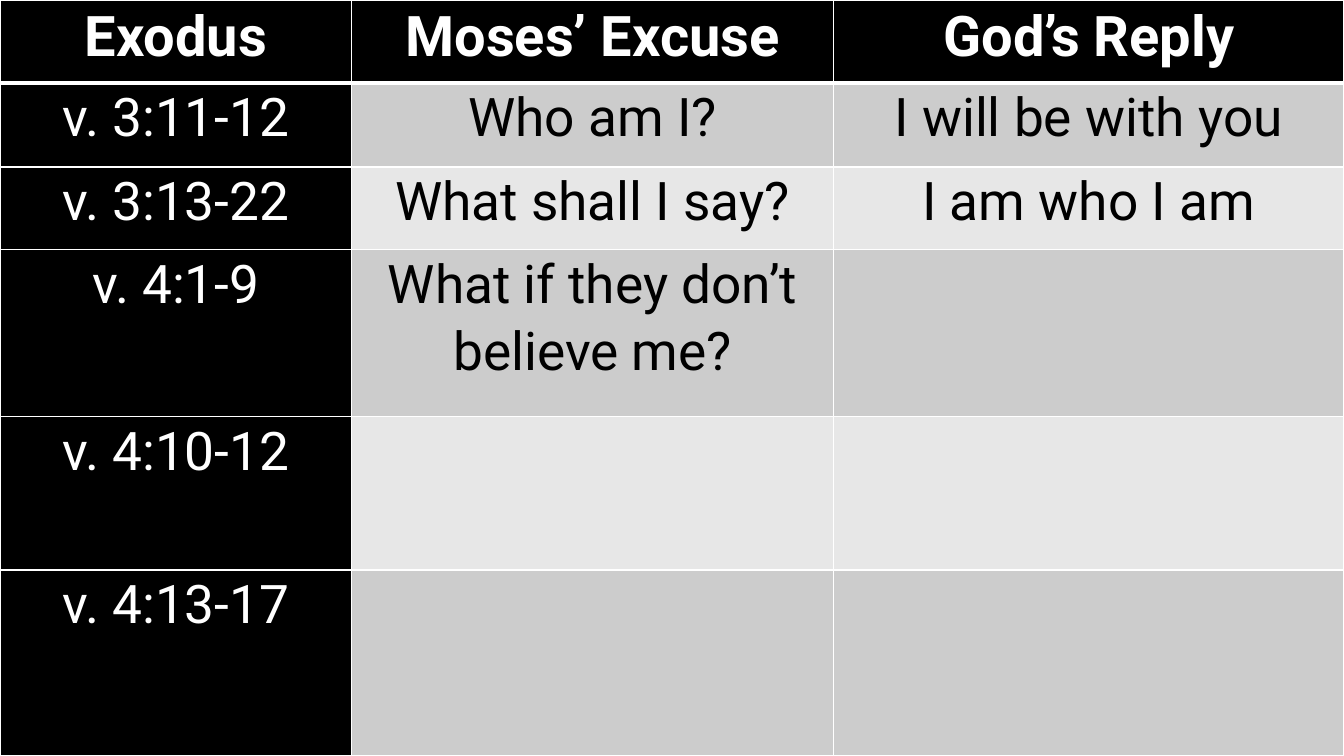
"""Build a slide with a table of Moses' excuses and God's replies."""
from dataclasses import dataclass

from lxml import etree
from pptx import Presentation
from pptx.dml.color import RGBColor
from pptx.enum.text import MSO_ANCHOR, PP_ALIGN
from pptx.oxml.ns import qn
from pptx.table import _Cell
from pptx.util import Emu, Pt

CENTER = PP_ALIGN.CENTER
TOP = MSO_ANCHOR.TOP
BLANK_LAYOUT = 6
EMU_PER_PX = 9525
PAGE_WIDTH, PAGE_HEIGHT = 1280, 720
COLUMN_WIDTHS = (335, 459, 486)
CELL_INSET = 7


@dataclass(frozen=True)
class Theme:
    """Hold the colours and type sizes of the slide."""
    font: str = "Roboto"
    black: str = "000000"
    white: str = "FFFFFF"
    bands: tuple[str, str] = ("CCCCCC", "E7E7E7")
    header_size: int = 40
    body_size: int = 38
    line_spacing: float = 1.07
    border_width: int = 1
    header_rule_width: int = 3


@dataclass(frozen=True)
class Passage:
    """Describe one table row."""
    height: int
    verses: str
    excuse: str = ""
    reply: str = ""


THEME = Theme()
PASSAGES = (
    Passage(79, "Exodus", "Moses’ Excuse", "God’s Reply"),
    Passage(80, "v. 3:11-12", "Who am I?", "I will be with you"),
    Passage(79, "v. 3:13-22", "What shall I say?", "I am who I am"),
    Passage(159, "v. 4:1-9", "What if they don’t believe me?"),
    Passage(146, "v. 4:10-12"),
    Passage(177, "v. 4:13-17"),
)


def px(length: int) -> Emu:
    """Turn pixels into EMU."""
    return Emu(length * EMU_PER_PX)


def add_borders(cell: _Cell, bottom_width: int) -> None:
    """Draw the four white borders of a cell."""
    properties = cell._tc.get_or_add_tcPr()
    for side in "LRTB":
        width = bottom_width if side == "B" else THEME.border_width
        line = etree.SubElement(properties, qn(f"a:ln{side}"), w=str(Pt(width)))
        fill = etree.SubElement(line, qn("a:solidFill"))
        etree.SubElement(fill, qn("a:srgbClr"), val=THEME.white)


def write_text(cell: _Cell, text: str, color: str, is_header: bool) -> None:
    """Write one centred paragraph in a cell."""
    para = cell.text_frame.paragraphs[0]
    para.alignment = CENTER
    para.line_spacing = THEME.line_spacing
    span = para.add_run()
    span.text = text
    span.font.name = THEME.font
    span.font.size = Pt(THEME.header_size if is_header else THEME.body_size)
    span.font.bold = is_header
    span.font.color.rgb = RGBColor.from_string(color)


def format_cell(cell: _Cell, text: str, row: int, column: int) -> None:
    """Set the fill, borders, insets and text of a cell."""
    is_header = row == 0
    is_dark = is_header or column == 0
    add_borders(cell, THEME.header_rule_width if is_header else THEME.border_width)
    cell.fill.solid()
    color = THEME.black if is_dark else THEME.bands[(row - 1) % 2]
    cell.fill.fore_color.rgb = RGBColor.from_string(color)
    cell.margin_left = cell.margin_right = px(CELL_INSET)
    cell.margin_top = cell.margin_bottom = 0
    cell.vertical_anchor = TOP
    if text:
        write_text(cell, text, THEME.white if is_dark else THEME.black, is_header)


def main() -> None:
    """Build and save the deck."""
    deck = Presentation()
    deck.slide_width, deck.slide_height = px(PAGE_WIDTH), px(PAGE_HEIGHT)
    page = deck.slides.add_slide(deck.slide_layouts[BLANK_LAYOUT])
    page.background.fill.solid()
    page.background.fill.fore_color.rgb = RGBColor.from_string(THEME.black)
    table = page.shapes.add_table(
        len(PASSAGES), len(COLUMN_WIDTHS), 0, 0, px(PAGE_WIDTH), px(PAGE_HEIGHT)
    ).table
    for column, width in enumerate(COLUMN_WIDTHS):
        table.columns[column].width = px(width)
    for row, passage in enumerate(PASSAGES):
        table.rows[row].height = px(passage.height)
        texts = (passage.verses, passage.excuse, passage.reply)
        for column, text in enumerate(texts):
            format_cell(table.cell(row, column), text, row, column)
    deck.save("out.pptx")


if __name__ == "__main__":
    main()
